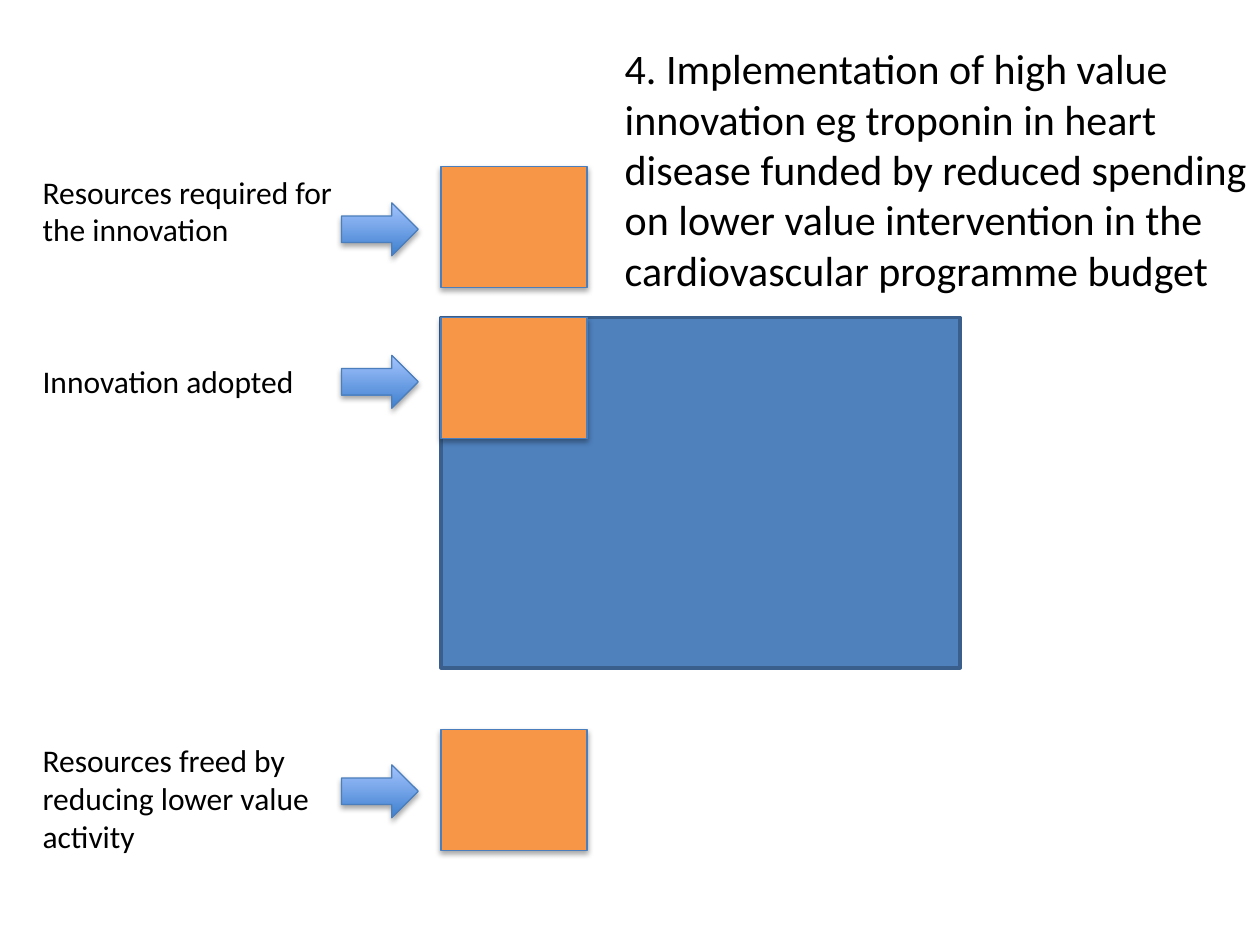
from lxml import etree
from pptx import Presentation
from pptx.dml.color import RGBColor
from pptx.enum.shapes import MSO_SHAPE
from pptx.oxml import parse_xml
from pptx.util import Inches, Pt

RECT, ARROW = MSO_SHAPE.RECTANGLE, MSO_SHAPE.RIGHT_ARROW

BLACK = RGBColor(0x00, 0x00, 0x00)
BLUE = RGBColor(0x4F, 0x81, 0xBD)
NAVY = RGBColor(0x3A, 0x5F, 0x8C)
EDGE = RGBColor(0x4B, 0x7E, 0xBC)
ORANGE = RGBColor(0xF7, 0x96, 0x46)
DARK = RGBColor(0x3F, 0x80, 0xCE)
LIGHT = RGBColor(0xA4, 0xC4, 0xFF)

SHADOW = parse_xml(
    '<a:effectLst xmlns:a="http://schemas.openxmlformats.org/drawingml/2006/main">'
    '<a:outerShdw blurRad="40000" dist="23000" dir="5400000" rotWithShape="0">'
    '<a:srgbClr val="000000"><a:alpha val="35000"/></a:srgbClr>'
    '</a:outerShdw></a:effectLst>')


class Board:
    font = "Calibri"

    def __init__(self, slide):
        self.slide = slide

    def shape(self, kind, box, line, width, shadow=True):
        item = self.slide.shapes.add_shape(kind, *map(Inches, box))
        item.shadow.inherit = False
        if shadow:
            props = item._element.spPr
            old = props.find("{*}effectLst")
            props.replace(old, etree.fromstring(etree.tostring(SHADOW)))
        item.line.color.rgb = line
        item.line.width = Pt(width)
        return item

    def block(self, box, fill, line=EDGE, width=0.75, shadow=True):
        item = self.shape(RECT, box, line, width, shadow)
        item.fill.solid()
        item.fill.fore_color.rgb = fill

    def arrow(self, box):
        item = self.shape(ARROW, box, EDGE, 0.75)
        item.fill.gradient()
        item.fill.gradient_angle = 90
        for stop, color, place in zip(item.fill.gradient_stops, (DARK, LIGHT), (0, 1)):
            stop.color.rgb = color
            stop.position = place

    def text(self, box, size, lines):
        """Each line is a pair: wording and the space before it in points."""
        frame = self.slide.shapes.add_textbox(*map(Inches, box)).text_frame
        frame.word_wrap = True
        for i, (words, gap) in enumerate(lines):
            para = frame.add_paragraph() if i else frame.paragraphs[0]
            para.text = words
            para.space_before = Pt(gap)
            para.font.name = self.font
            para.font.size = Pt(size)
            para.font.color.rgb = BLACK


def main():
    deck = Presentation()
    deck.slide_width, deck.slide_height = Inches(10), Inches(7.5)
    board = Board(deck.slides.add_slide(deck.slide_layouts[6]))

    # Programme budget
    board.block((3.5, 2.52, 4.12, 2.78), BLUE, NAVY, 2, shadow=False)

    # Heading
    board.text((4.86, 0.29, 5.26, 2.42), 24, [
        ("4. Implementation of high value innovation eg troponin in heart "
         "disease funded by reduced spending on lower value intervention "
         "in the cardiovascular programme budget", 0)])

    # Resource blocks, each with its arrow
    for top in (1.32, 2.52, 5.79):
        board.block((3.5, top, 1.16, 0.96), ORANGE)
    for top in (1.61, 2.82, 6.07):
        board.arrow((2.71, top, 0.61, 0.42))

    # Row labels
    board.text((0.24, 1.32, 2.76, 5.55), 18, [
        ("Resources required for", 0),
        ("the innovation", 0),
        ("Innovation adopted", 65),
        ("Resources freed by reducing lower value activity", 195)])

    deck.save("out.pptx")


if __name__ == "__main__":
    main()
